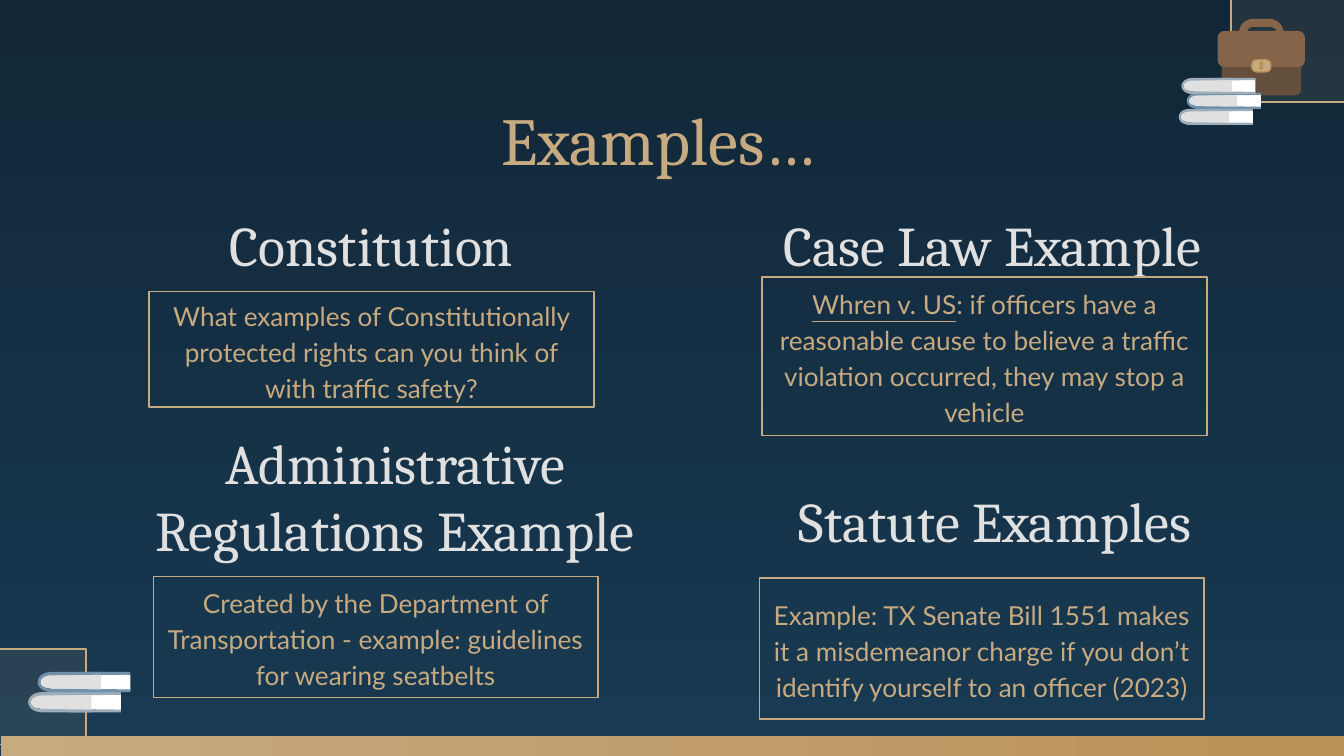
from math import cos, pi, sin

from lxml.etree import SubElement
from pptx import Presentation
from pptx.dml.color import RGBColor
from pptx.enum.shapes import MSO_SHAPE
from pptx.enum.text import MSO_ANCHOR, PP_ALIGN
from pptx.oxml.ns import qn
from pptx.util import Inches, Pt

NAVY = RGBColor(0x12, 0x27, 0x38)
BLUE = RGBColor(0x18, 0x3A, 0x52)
GOLD = RGBColor(0xC8, 0xAA, 0x81)
BRASS = RGBColor(0xBA, 0x91, 0x58)
LEATHER = RGBColor(0x85, 0x64, 0x49)
DARK_LEATHER = RGBColor(0x65, 0x50, 0x3E)
WHITE = RGBColor(0xFF, 0xFF, 0xFF)
PALE = RGBColor(0xE0, 0xE0, 0xE0)
GREY = RGBColor(0x9C, 0xAC, 0xB9)
STEEL = RGBColor(0x70, 0x91, 0xA9)


def set_gradient(fill, colors, angle):
    fill.gradient()
    fill.gradient_angle = angle
    for stop, color in zip(fill.gradient_stops, colors):
        stop.color.rgb = color


def add_block(s, kind, x, y, w, h, color=None):
    sp = s.shapes.add_shape(kind, Inches(x), Inches(y), Inches(w), Inches(h))
    sp.shadow.inherit = False
    sp.line.fill.background()
    if color is None:
        sp.fill.background()
    else:
        sp.fill.solid()
        sp.fill.fore_color.rgb = color
    return sp


def add_rounded(s, x, y, w, h, radius, color):
    sp = add_block(s, MSO_SHAPE.ROUNDED_RECTANGLE, x, y, w, h, color)
    sp.adjustments[0] = radius / min(w, h)


def add_outline(s, x, y, scale, points, color):
    pts = [(Inches(x + scale * px), Inches(y + scale * py)) for px, py in points]
    fb = s.shapes.build_freeform(*pts[0], scale=1.0)
    fb.add_line_segments(pts[1:], close=True)
    sp = fb.convert_to_shape()
    sp.shadow.inherit = False
    sp.fill.solid()
    sp.fill.fore_color.rgb = color
    sp.line.fill.background()


def arc(cx, cy, rx, ry, start, end, steps=12):
    angles = [start + (end - start) * i / steps for i in range(steps + 1)]
    return [(cx + rx * cos(a), cy + ry * sin(a)) for a in angles]


def add_book(s, x, y, scale, cover_color):
    cover = [(0.47, 0), *arc(0.1, 0.075, 0.1, 0.075, 1.5 * pi, 0.5 * pi),
             (0.47, 0.15), (0.47, 0.13),
             *arc(0.1, 0.075, 0.08, 0.05, 0.5 * pi, 1.5 * pi), (0.47, 0.02)]
    for shift, start, color in ((0.22, -0.1, WHITE), (0, 0.02, PALE)):
        pages = [(0.47, 0.14), (start + 0.1, 0.13), (start, 0.11),
                 (start, 0.04), (start + 0.1, 0.01), (0.47, 0.02)]
        left = x + shift * scale
        add_outline(s, left, y, scale, pages, color)
        add_outline(s, left, y, scale, cover, cover_color)


def add_briefcase(s, x, y):
    handle = [*arc(0.27, 0.1, 0.11, 0.1, pi, 1.5 * pi),
              *arc(0.38, 0.1, 0.11, 0.1, 1.5 * pi, 2 * pi),
              *arc(0.38, 0.1, 0.06, 0.04, 2 * pi, 1.5 * pi),
              *arc(0.27, 0.1, 0.05, 0.04, 1.5 * pi, pi)]
    add_outline(s, x, y, 1, handle, LEATHER)
    add_rounded(s, x + 0.03, y + 0.14, 0.59, 0.43, 0.04, DARK_LEATHER)
    add_rounded(s, x, y + 0.09, 0.65, 0.27, 0.05, LEATHER)
    add_rounded(s, x + 0.25, y + 0.3, 0.15, 0.1, 0.04, BRASS)
    add_rounded(s, x + 0.26, y + 0.31, 0.13, 0.08, 0.03, GOLD)
    add_rounded(s, x + 0.31, y + 0.32, 0.03, 0.06, 0.01, BRASS)


def add_corner(s, x, y, w, h):
    sp = add_block(s, MSO_SHAPE.RECTANGLE, x, y, w, h, GOLD)
    color = sp.fill._xPr.find(qn("a:solidFill")).find(qn("a:srgbClr"))
    SubElement(color, qn("a:alpha")).set("val", "10000")
    sp.line.color.rgb = GOLD
    sp.line.width = Pt(0.75)


def add_decoration(s):
    add_corner(s, 9.16, -0.05, 0.9, 0.81)
    add_briefcase(s, 9.06, 0.14)
    for x, y, color in ((8.77, 0.81, GREY), (8.83, 0.69, STEEL), (8.79, 0.58, GREY)):
        add_book(s, x, y, 0.8, color)
    add_corner(s, -0.26, 4.83, 0.9, 0.71)
    for x, y, color in ((0.21, 5.15, GREY), (0.28, 5, STEEL)):
        add_book(s, x, y, 1, color)
    bar = add_block(s, MSO_SHAPE.RECTANGLE, 4.93, 0.55, 0.15, 10, GOLD)
    bar.rotation = 90
    set_gradient(bar.fill, (BRASS, GOLD), 270)


def write(sp, runs, font, size, color, anchor, spacing=1.0):
    tf = sp.text_frame
    tf.word_wrap = True
    tf.vertical_anchor = anchor
    tf.margin_left = tf.margin_right = tf.margin_top = tf.margin_bottom = Inches(0.1)
    p = tf.paragraphs[0]
    p.alignment = PP_ALIGN.CENTER
    p.line_spacing = spacing
    for text, underlined in runs:
        r = p.add_run()
        r.text = text
        r.font.name = font
        r.font.size = Pt(size)
        r.font.color.rgb = color
        if underlined:
            r.font.underline = True


def add_heading(s, box, text, size, color, anchor):
    sp = s.shapes.add_textbox(*(Inches(v) for v in box))
    write(sp, [(text, False)], "Cambria", size, color, anchor)


def add_example(s, heading_box, heading, box, runs):
    add_heading(s, heading_box, heading, 30, PALE, MSO_ANCHOR.BOTTOM)
    sp = add_block(s, MSO_SHAPE.RECTANGLE, *box)
    sp.line.color.rgb = GOLD
    sp.line.width = Pt(0.75)
    write(sp, runs, "Lato", 14, GOLD, MSO_ANCHOR.MIDDLE, 1.15)


EXAMPLES = [
    ((1.11, 1.27, 3.31, 0.9), "Constitution", (1.11, 2.17, 3.31, 0.86),
     [("What examples of Constitutionally protected rights can you think of "
       "with traffic safety?", False)]),
    ((5.41, 3.32, 3.99, 0.9), "Statute Examples", (5.65, 4.3, 3.31, 1.05),
     [("Example: TX Senate Bill 1551 makes it a misdemeanor charge if you don’t "
       "identify yourself to an officer (2023)", False)]),
    ((5.25, 1.27, 4.27, 0.9), "Case Law Example", (5.67, 2.06, 3.31, 1.18),
     [("Whren v. US", True),
      (": if officers have a reasonable cause to believe a traffic violation "
       "occurred, they may stop a vehicle", False)]),
    ((0.63, 3.39, 4.62, 0.9), "Administrative Regulations Example",
     (1.14, 4.29, 3.31, 0.9),
     [("Created by the Department of Transportation - example: guidelines "
       "for wearing seatbelts", False)]),
]


def main():
    prs = Presentation()
    prs.slide_width = Inches(10)
    prs.slide_height = Inches(10 * 9 / 16)
    s = prs.slides.add_slide(prs.slide_layouts[6])
    set_gradient(s.background.fill, (NAVY, BLUE), 270)
    add_decoration(s)
    for example in EXAMPLES:
        add_example(s, *example)
    add_heading(s, (0.63, 0.63, 8.54, 0.81), "Examples…", 36, GOLD, MSO_ANCHOR.TOP)
    prs.save("out.pptx")


if __name__ == "__main__":
    main()
